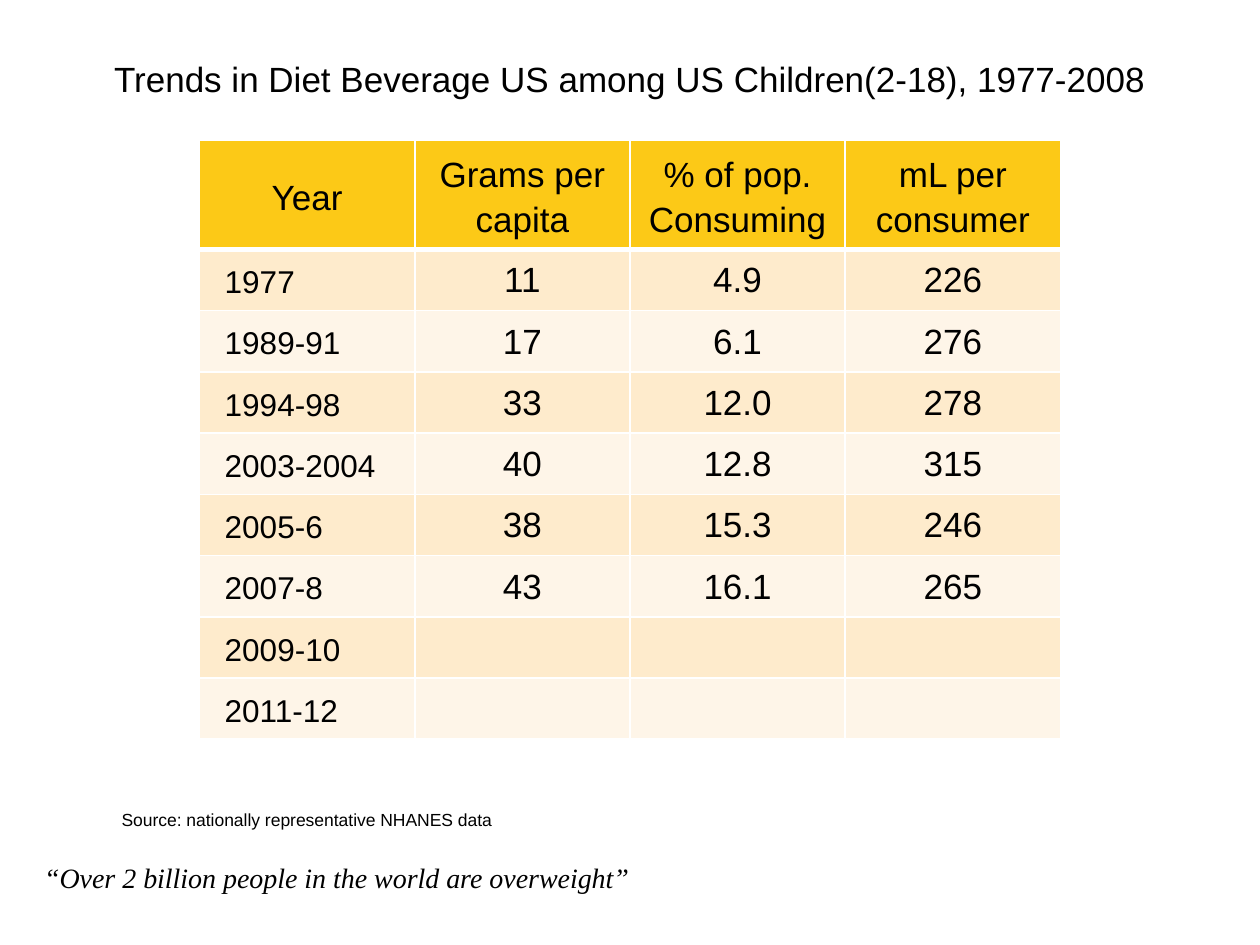
from lxml import etree
from pptx import Presentation
from pptx.dml.color import RGBColor
from pptx.enum import text as t
from pptx.oxml import ns
from pptx.util import Pt

# Content
TITLE = "Trends in Diet Beverage US among US Children(2-18), 1977-2008"
HEADER = ("Year", "Grams per capita", "% of pop. Consuming", "mL per consumer")
ROWS = [
    ("1977", "11", "4.9", "226"),
    ("1989-91", "17", "6.1", "276"),
    ("1994-98", "33", "12.0", "278"),
    ("2003-2004", "40", "12.8", "315"),
    ("2005-6", "38", "15.3", "246"),
    ("2007-8", "43", "16.1", "265"),
    ("2009-10", "", "", ""),
    ("2011-12", "", "", ""),
]
SOURCE = "Source: nationally representative NHANES data"
QUOTE = "“Over 2 billion people in the world are overweight”"

COLORS = {"text": "000000", "line": "FFFFFF", "header": "FCC917",
          "odd": "FEEBCC", "even": "FEF5E8"}

# Cell margins: left, top, right, bottom
HEADER_INSETS = (5, 0, 5, 0)
YEAR_INSETS = (14.4, 3.6, 3.6, 3.6)
VALUE_INSETS = (0.75, 0.75, 0.75, 0)


def rgb(name):
    return RGBColor.from_string(COLORS[name])


def write(tf, words, size, align=t.PP_ALIGN.LEFT, font="Arial", italic=False, spacing=None):
    p = tf.paragraphs[0]
    p.text = words
    p.alignment = align
    p.line_spacing = spacing
    p.font.name, p.font.size = font, Pt(size)
    p.font.bold, p.font.italic = False, italic
    p.font.color.rgb = rgb("text")


def add_text(s, words, box, size, anchor, **style):
    tf = s.shapes.add_textbox(*map(Pt, box)).text_frame
    tf.word_wrap = False
    tf.vertical_anchor = anchor
    write(tf, words, size, **style)
    return tf


def add_borders(cell, bottom):
    tcPr = cell._tc.get_or_add_tcPr()
    for side, width in (("L", 1), ("R", 1), ("T", 1), ("B", bottom)):
        ln = etree.SubElement(tcPr, ns.qn(f"a:ln{side}"), w=str(Pt(width)))
        fill = etree.SubElement(ln, ns.qn("a:solidFill"))
        etree.SubElement(fill, ns.qn("a:srgbClr"), val=COLORS["line"])


def fill_cell(cell, words, row, col):
    add_borders(cell, bottom=3 if row == 0 else 1)
    cell.fill.solid()
    cell.fill.fore_color.rgb = rgb("header" if row == 0 else "odd" if row % 2 else "even")
    if not words:
        return
    is_year = row > 0 and col == 0
    insets = HEADER_INSETS if row == 0 else YEAR_INSETS if is_year else VALUE_INSETS
    (cell.margin_left, cell.margin_top,
     cell.margin_right, cell.margin_bottom) = map(Pt, insets)
    cell.vertical_anchor = t.MSO_ANCHOR.MIDDLE
    write(cell.text_frame, words, 18 if is_year else 20,
          t.PP_ALIGN.LEFT if is_year else t.PP_ALIGN.CENTER,
          spacing=1.15 if row == 0 or is_year else None)


def main():
    prs = Presentation()
    prs.slide_width, prs.slide_height = Pt(720), Pt(540)
    s = prs.slides.add_slide(prs.slide_layouts[5])

    # Title
    title = s.shapes.title
    title.left, title.top, title.width, title.height = map(Pt, (52, 11.5, 616, 67))
    title.text_frame.vertical_anchor = t.MSO_ANCHOR.MIDDLE
    write(title.text_frame, TITLE, 20, t.PP_ALIGN.CENTER)

    # Table of trends
    data = [HEADER, *ROWS]
    heights = [62.4] + [35] * len(ROWS)
    table = s.shapes.add_table(len(data), len(HEADER), Pt(114), Pt(80.2),
                               Pt(492), Pt(sum(heights))).table
    for row, (values, height) in enumerate(zip(data, heights)):
        table.rows[row].height = Pt(height)
        for col, words in enumerate(values):
            fill_cell(table.cell(row, col), words, row, col)

    # Source and closing quote
    add_text(s, SOURCE, (62.4, 458.6, 227.5, 19.4), 10, t.MSO_ANCHOR.TOP)
    quote = add_text(s, QUOTE, (0, 480.2, 720, 41.8), 16, t.MSO_ANCHOR.MIDDLE,
                     font="Times New Roman", italic=True)
    quote.margin_left = Pt(25.2)

    prs.save("out.pptx")


if __name__ == "__main__":
    main()
